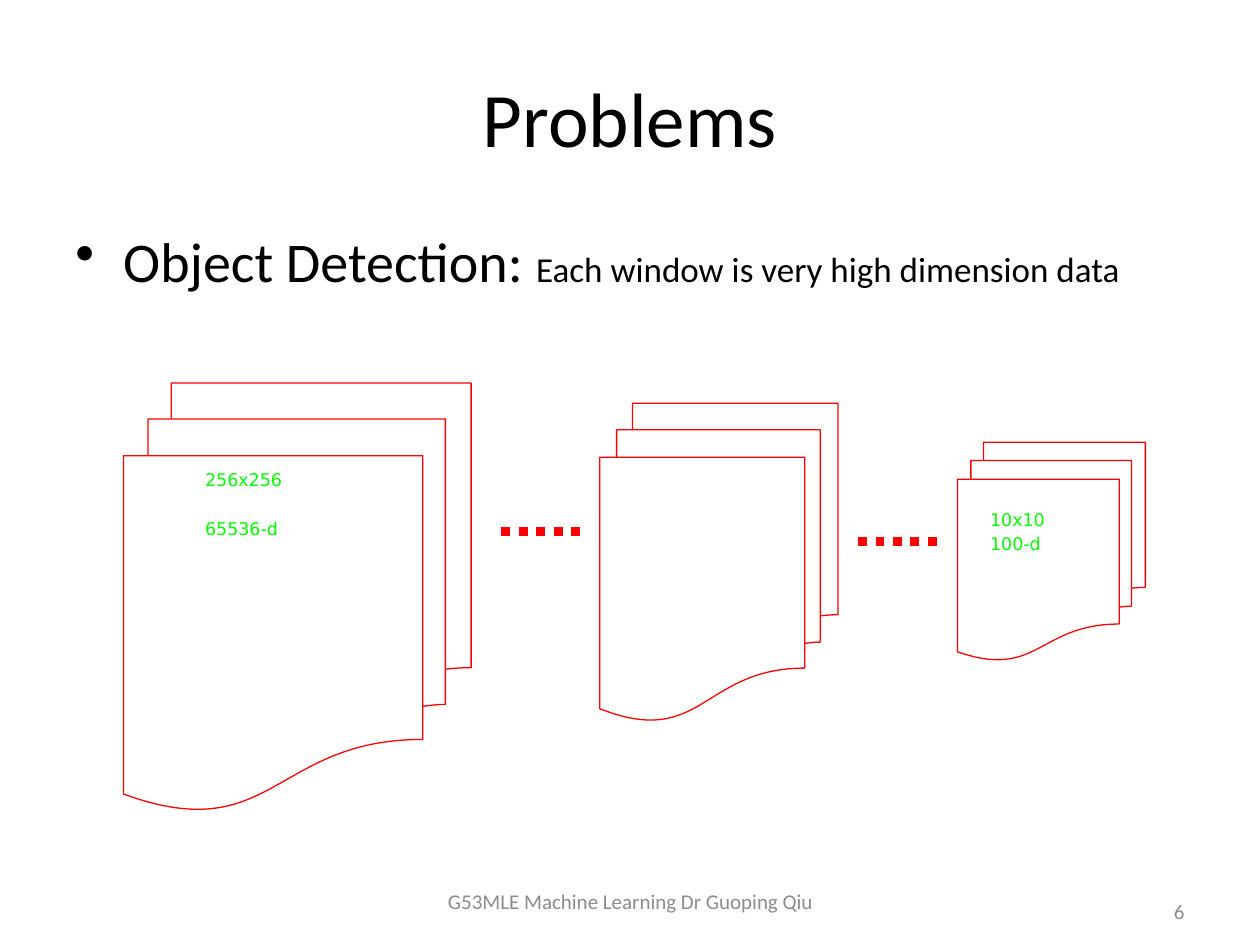
from pptx import Presentation
from pptx.dml.color import RGBColor
from pptx.enum.dml import MSO_LINE
from pptx.enum.shapes import MSO_CONNECTOR, MSO_SHAPE
from pptx.enum.text import MSO_ANCHOR, PP_ALIGN
from pptx.oxml.ns import qn
from pptx.util import Inches, Pt
from lxml import etree

LEFT, CENTER, RIGHT = PP_ALIGN.LEFT, PP_ALIGN.CENTER, PP_ALIGN.RIGHT
TOP, MIDDLE = MSO_ANCHOR.TOP, MSO_ANCHOR.MIDDLE
DOTTED = MSO_LINE.ROUND_DOT
STRAIGHT = MSO_CONNECTOR.STRAIGHT
STACK = MSO_SHAPE.FLOWCHART_MULTIDOCUMENT
COLORS = {"text": "000000", "outline": "FF0000", "label": "00FF00", "footer": "8C8C8C"}
COLUMNS, ROWS = 100, 75


class SlideWriter:
    body_font = "Calibri"
    label_font = "DejaVu Sans"

    def __init__(self, deck):
        self.column = deck.slide_width / COLUMNS
        self.row = deck.slide_height / ROWS
        self.page = deck.slides.add_slide(deck.slide_layouts[6])

    def place(self, left, top, width, height):
        return (round(left * self.column), round(top * self.row),
                round(width * self.column), round(height * self.row))

    def color(self, name):
        return RGBColor.from_string(COLORS[name])

    def text(self, area, lines, size, color="text", font=body_font,
             align=LEFT, anchor=TOP, gap=0):
        box = self.page.shapes.add_textbox(*self.place(*area))
        frame = box.text_frame
        frame.word_wrap = True
        frame.vertical_anchor = anchor
        for index, line in enumerate(lines):
            para = frame.paragraphs[0] if index == 0 else frame.add_paragraph()
            para.text = line
            para.alignment = align
            para.space_before = Pt(gap if index else size * 0.2)
            para.font.size = Pt(size)
            para.font.name = font
            para.font.color.rgb = self.color(color)
        return frame

    def bullet(self, area, heading, detail, size, detail_size):
        para = self.text(area, [heading], size).paragraphs[0]
        span = para.add_run()
        span.text = detail
        span.font.size = Pt(detail_size)
        properties = para._p.get_or_add_pPr()
        indent = Inches(0.38)
        properties.set("marL", str(indent))
        properties.set("indent", str(-indent))
        mark = etree.Element(qn("a:buChar"), char="•")
        properties.find(qn("a:spcBef")).addnext(mark)

    def label(self, area, lines, gap=2):
        self.text(area, lines, 10, "label", self.label_font, gap=gap)

    def stack(self, area):
        shape = self.page.shapes.add_shape(STACK, *self.place(*area))
        shape.shadow.inherit = False
        shape.fill.background()
        shape.line.color.rgb = self.color("outline")
        shape.line.width = Pt(0.75)

    def dots(self, left, top, length):
        x, y, width, _ = self.place(left, top, length, 0)
        line = self.page.shapes.add_connector(STRAIGHT, x, y, x + width, y)
        line.line.color.rgb = self.color("outline")
        line.line.width = Pt(5)
        line.line.dash_style = DOTTED
        etree.SubElement(line._element.spPr, qn("a:effectLst"))


def main():
    deck = Presentation()
    deck.slide_width, deck.slide_height = Inches(10), Inches(7.5)
    slide = SlideWriter(deck)

    slide.text((5, 3, 90, 12.5), ["Problems"], 44, align=CENTER, anchor=MIDDLE)
    slide.bullet((5, 17.5, 90, 49.5), "Object Detection: ",
                 "Each window is very high dimension data", 32, 20)

    for left, top in ((39.8, 42.2), (68.1, 43)):
        slide.dots(left, top, 6.3)
    slide.label((15.3, 36.7, 14, 10), ["256x256", "65536-d"], gap=16)
    slide.label((77.6, 39.9, 9.9, 7), ["10x10", "100-d"])
    for area in ((9.8, 30.4, 27.6, 33.9), (76, 35.1, 14.9, 17.3), (47.6, 32, 18.9, 25.2)):
        slide.stack(area)

    number = slide.text((71.7, 69.5, 23.3, 4), ["6"], 12, "footer", align=RIGHT)
    number.margin_top, number.margin_bottom = Inches(0.18), 0
    slide.text((34.2, 69.5, 31.7, 4), ["G53MLE Machine Learning Dr Guoping Qiu"],
               12, "footer", align=CENTER, anchor=MIDDLE)

    deck.save("out.pptx")


if __name__ == "__main__":
    main()
